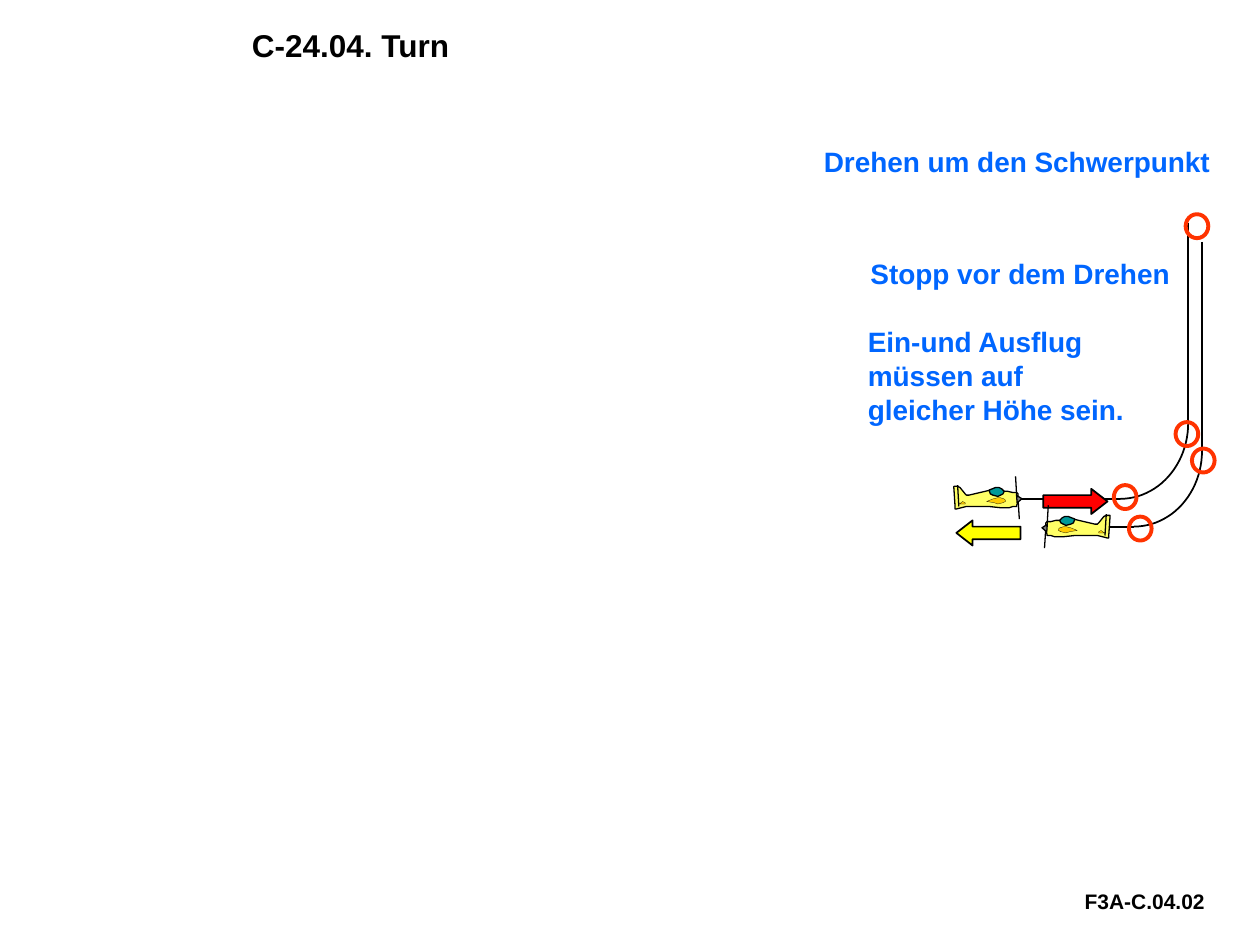
from math import cos, pi, sin

from lxml import etree
from pptx import Presentation
from pptx.dml.color import RGBColor
from pptx.enum.shapes import MSO_CONNECTOR, MSO_SHAPE
from pptx.enum.text import MSO_AUTO_SIZE
from pptx.oxml.ns import qn
from pptx.util import Inches, Pt

STRAIGHT = MSO_CONNECTOR.STRAIGHT
LEFT_ARROW, RIGHT_ARROW = MSO_SHAPE.LEFT_ARROW, MSO_SHAPE.RIGHT_ARROW
OVAL, TRIANGLE = MSO_SHAPE.OVAL, MSO_SHAPE.ISOSCELES_TRIANGLE
GROW = MSO_AUTO_SIZE.SHAPE_TO_FIT_TEXT

COLORS = {
    "black": "000000", "note": "0066FF", "marker": "FF3300",
    "entry": "FF0000", "exit": "FFFF00", "body": "FFFF66",
    "canopy": "009999", "trim": "FFCC00", "spinner": "808080",
}

# Aircraft outlines facing right, in inches from the corner of its box
PLANE_WIDTH = 0.51
BODY = [
    (0.40, 0.06), (0.43, 0.06), (0.47, 0.07), (0.50, 0.07), (0.51, 0.08),
    (0.51, 0.14), (0.50, 0.17), (0.50, 0.18), (0.47, 0.18), (0.44, 0.19),
    (0.37, 0.19), (0.28, 0.18), (0.10, 0.18), (0.06, 0.19), (0.02, 0.20),
    (0.01, 0.20), (0.01, 0.18), (0.00, 0.03), (0.00, 0.02), (0.03, 0.02),
    (0.05, 0.03), (0.09, 0.08), (0.10, 0.09), (0.12, 0.09), (0.29, 0.05),
    (0.30, 0.08), (0.35, 0.09), (0.37, 0.09), (0.39, 0.07),
]
CANOPY = [
    (0.28, 0.05), (0.29, 0.08), (0.31, 0.09), (0.35, 0.10), (0.39, 0.08),
    (0.40, 0.06), (0.38, 0.04), (0.36, 0.03), (0.33, 0.03),
]
WING = [
    (0.26, 0.14), (0.31, 0.12), (0.35, 0.11), (0.37, 0.11), (0.40, 0.12),
    (0.41, 0.13), (0.41, 0.14), (0.39, 0.15), (0.35, 0.16), (0.32, 0.15),
]
TAILPLANE = [
    (0.04, 0.16), (0.08, 0.16), (0.09, 0.16), (0.09, 0.15), (0.07, 0.14),
    (0.06, 0.15),
]


def rgb(name):
    return RGBColor.from_string(COLORS[name])


def style(shape, fill=None, line="black", width=1):
    shape.shadow.inherit = False
    if fill:
        shape.fill.solid()
        shape.fill.fore_color.rgb = rgb(fill)
    else:
        shape.fill.background()
    shape.line.color.rgb = rgb(line)
    shape.line.width = Pt(width)


def add_text(slide, text, box, size=16, color="note", insets=(0.1, 0.05)):
    label = slide.shapes.add_textbox(*map(Inches, box))
    frame = label.text_frame
    frame.word_wrap = True
    frame.auto_size = GROW
    frame.margin_left = frame.margin_right = Inches(insets[0])
    frame.margin_top = frame.margin_bottom = Inches(insets[1])
    frame.text = text
    font = frame.paragraphs[0].runs[0].font
    font.name, font.size, font.bold = "Arial", Pt(size), True
    font.color.rgb = rgb(color)


def add_line(slide, start, end, width=1):
    line = slide.shapes.add_connector(STRAIGHT, *map(Inches, (*start, *end)))
    line.line.color.rgb = rgb("black")
    line.line.width = Pt(width)
    etree.SubElement(line._element.spPr, qn("a:effectLst"))


def add_preset(slide, kind, box, **look):
    shape = slide.shapes.add_shape(kind, *map(Inches, box))
    style(shape, **look)
    return shape


def add_outline(slide, points, close=True, **look):
    corners = [(Inches(x), Inches(y)) for x, y in points]
    builder = slide.shapes.build_freeform(*corners[0])
    builder.add_line_segments(corners[1:], close=close)
    style(builder.convert_to_shape(), **look)


def add_flight_path(slide, box, top, line_end):
    """Vertical line, quarter curve filling the box, and level line."""
    left, curve_top, width, height = box
    right, bottom = left + width, curve_top + height
    steps = 24
    angles = [pi / 2 * step / steps for step in range(steps + 1)]
    add_line(slide, (right, top), (right, curve_top))
    add_outline(slide, [(left + width * cos(a), curve_top + height * sin(a))
                        for a in angles], close=False)
    add_line(slide, (left, bottom), (line_end, bottom))


def add_arrow(slide, kind, box, fill):
    arrow = add_preset(slide, kind, box, fill=fill)
    arrow.adjustments[0], arrow.adjustments[1] = 0.5, 0.645


def add_plane(slide, left, top, facing_left=False):
    def place(x, y):
        return left + (PLANE_WIDTH - x if facing_left else x), top + y

    def stroke(start, end):
        add_line(slide, place(*start), place(*end), width=0.75)

    stroke((0.52, 0.28), (0.51, 0.12))
    for outline, fill, width in (
        (BODY, "body", 0.75), (CANOPY, "canopy", 0.75),
        (WING, "trim", 0.13), (TAILPLANE, "trim", 0.13),
    ):
        add_outline(slide, [place(*point) for point in outline],
                    fill=fill, width=width)
    stroke((0.04, 0.18), (0.03, 0.01))
    x, y = place(0.52, 0.12)
    spinner = add_preset(slide, TRIANGLE, (x - 0.03, y - 0.02, 0.06, 0.04),
                         fill="spinner", width=0.75)
    spinner.rotation = 274.1 if facing_left else 85.9
    stroke((0.50, 0.11), (0.49, -0.06))


def add_markers(slide, corners):
    for left, top in corners:
        add_preset(slide, OVAL, (left, top, 0.18, 0.19),
                   line="marker", width=2.25)


def add_manoeuvre(slide):
    add_flight_path(slide, (8.89, 3.36, 0.54, 0.6), top=1.77, line_end=8.02)
    add_flight_path(slide, (9, 3.58, 0.54, 0.6), top=1.92, line_end=8.54)
    add_arrow(slide, RIGHT_ARROW, (8.28, 3.88, 0.51, 0.2), "entry")
    add_arrow(slide, LEFT_ARROW, (7.59, 4.13, 0.51, 0.2), "exit")
    add_plane(slide, 7.57, 3.84)
    add_plane(slide, 8.3, 4.07, facing_left=True)
    add_markers(slide, [(9.46, 3.56), (8.96, 4.1), (8.84, 3.85),
                        (9.33, 3.35), (9.41, 1.7)])


def add_notes_on_flying(slide):
    add_text(slide, "Drehen um den Schwerpunkt", (6.44, 1.1, 3.34, 0.37))
    add_text(slide, "Stopp vor dem Drehen", (6.81, 1.99, 2.68, 0.37))
    add_text(slide, "Ein-und Ausflug müssen auf gleicher Höhe sein.",
             (6.79, 2.53, 2.3, 0.91))


def main():
    deck = Presentation()
    deck.slide_width, deck.slide_height = Inches(10), Inches(7.5)
    slide = deck.slides.add_slide(deck.slide_layouts[6])
    add_text(slide, "C-24.04. Turn", (1.91, 0.17, 6.54, 0.39),
             size=18, color="black", insets=(0.09, 0.04))
    add_text(slide, "F3A-C.04.02", (8.51, 7, 1.32, 0.3),
             size=12, color="black")
    add_manoeuvre(slide)
    add_notes_on_flying(slide)
    deck.save("out.pptx")


if __name__ == "__main__":
    main()
